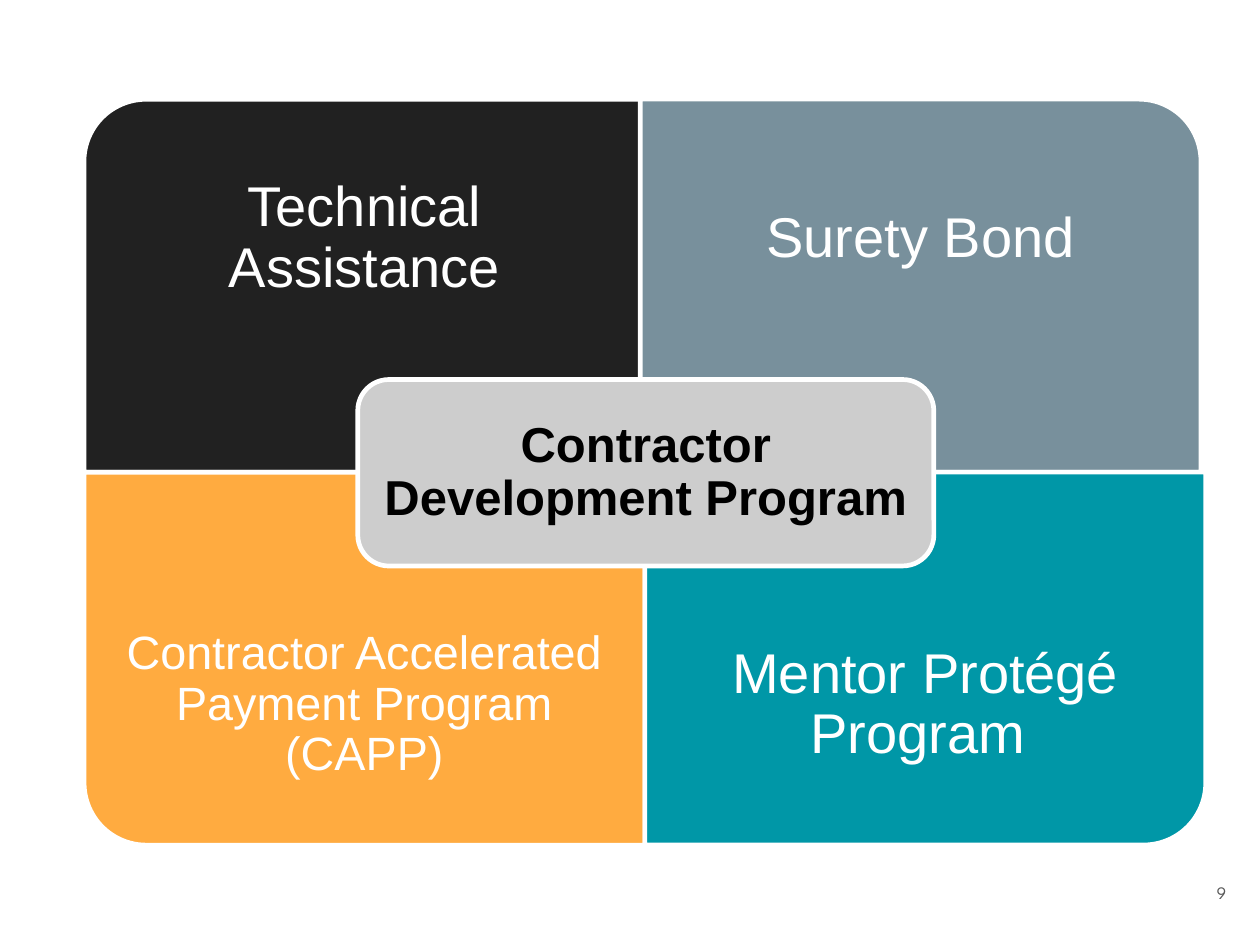
"""Build the four-quadrant Contractor Development Program slide."""
from pptx import Presentation
from pptx.dml.color import RGBColor
from pptx.enum.shapes import MSO_SHAPE as Preset
from pptx.enum.text import MSO_ANCHOR as Anchor, PP_ALIGN as Align
from pptx.util import Cm, Pt

WHITE = "FFFFFF"
QUADRANTS = [
    {"text": "Technical Assistance", "fill": "212121", "left": 1.27, "row": 0,
     "turn": 270, "size": 24, "inset": 0.48},
    {"text": "Surety Bond", "fill": "78909C", "left": 9.68, "row": 0,
     "turn": 0, "size": 24, "inset": 0.48},
    {"text": "Contractor Accelerated Payment Program (CAPP)", "fill": "FFAB40",
     "left": 1.27, "row": 1, "turn": 180, "size": 20, "inset": 0.4},
    {"text": "Mentor Protégé Program ", "fill": "0097A7", "left": 9.75, "row": 1,
     "turn": 90, "size": 24, "inset": 0.48},
]
CENTRE_TEXT = "Contractor Development Program "
PAGE_NUMBER = "9"

GRID_TOP, QUAD_WIDTH, QUAD_HEIGHT = 1.5, 8.48, 5.64
LABEL_HEIGHT = QUAD_HEIGHT * 0.75


def colour(value):
    return RGBColor.from_string(value)


def add_panel(page, preset, left, top, width, height, fill, turn=0):
    """Add a filled, white-edged shape that covers the given area after turning."""
    across, down = (height, width) if turn % 180 else (width, height)
    panel = page.shapes.add_shape(
        preset, Cm(left + (width - across) / 2), Cm(top + (height - down) / 2),
        Cm(across), Cm(down))
    panel.rotation = turn
    panel.shadow.inherit = False
    panel.fill.solid()
    panel.fill.fore_color.rgb = colour(fill)
    panel.line.color.rgb = colour(WHITE)
    panel.line.width = Pt(2)
    return panel


def write(box, text, size, inset, ink=WHITE, font="Arial", bold=False,
          align=Align.CENTER, spacing=0.9):
    """Put one formatted paragraph in the box."""
    frame = box.text_frame
    frame.word_wrap = True
    frame.vertical_anchor = Anchor.MIDDLE
    frame.margin_left = frame.margin_right = Cm(inset)
    frame.margin_top = frame.margin_bottom = Cm(inset)
    para = frame.paragraphs[0]
    para.alignment = align
    para.line_spacing = spacing
    span = para.add_run()
    span.text = text
    span.font.name = font
    span.font.size = Pt(size)
    span.font.bold = bold
    span.font.color.rgb = colour(ink)


def main():
    deck = Presentation()
    deck.slide_width, deck.slide_height = Cm(19.05), Cm(14.29)
    page = deck.slides.add_slide(deck.slide_layouts[6])

    for quad in QUADRANTS:
        top = GRID_TOP + quad["row"] * QUAD_HEIGHT
        add_panel(page, Preset.ROUND_1_RECTANGLE, quad["left"], top,
                  QUAD_WIDTH, QUAD_HEIGHT, quad["fill"], quad["turn"])
        label_top = top + quad["row"] * (QUAD_HEIGHT - LABEL_HEIGHT)
        label = page.shapes.add_textbox(
            Cm(quad["left"]), Cm(label_top), Cm(QUAD_WIDTH), Cm(LABEL_HEIGHT))
        write(label, quad["text"], quad["size"], quad["inset"])

    centre = add_panel(page, Preset.ROUNDED_RECTANGLE, 5.41, 5.74, 8.71, 2.82, "CDCDCD")
    write(centre, CENTRE_TEXT, 21, 0.23, ink="000000", bold=True)

    number = page.shapes.add_textbox(Cm(17.65), Cm(12.95), Cm(1.14), Cm(1.09))
    write(number, PAGE_NUMBER, 7.5, 0.25, ink="595959", font="League Spartan",
          align=Align.RIGHT, spacing=1.0)
    deck.save("out.pptx")


if __name__ == "__main__":
    main()
